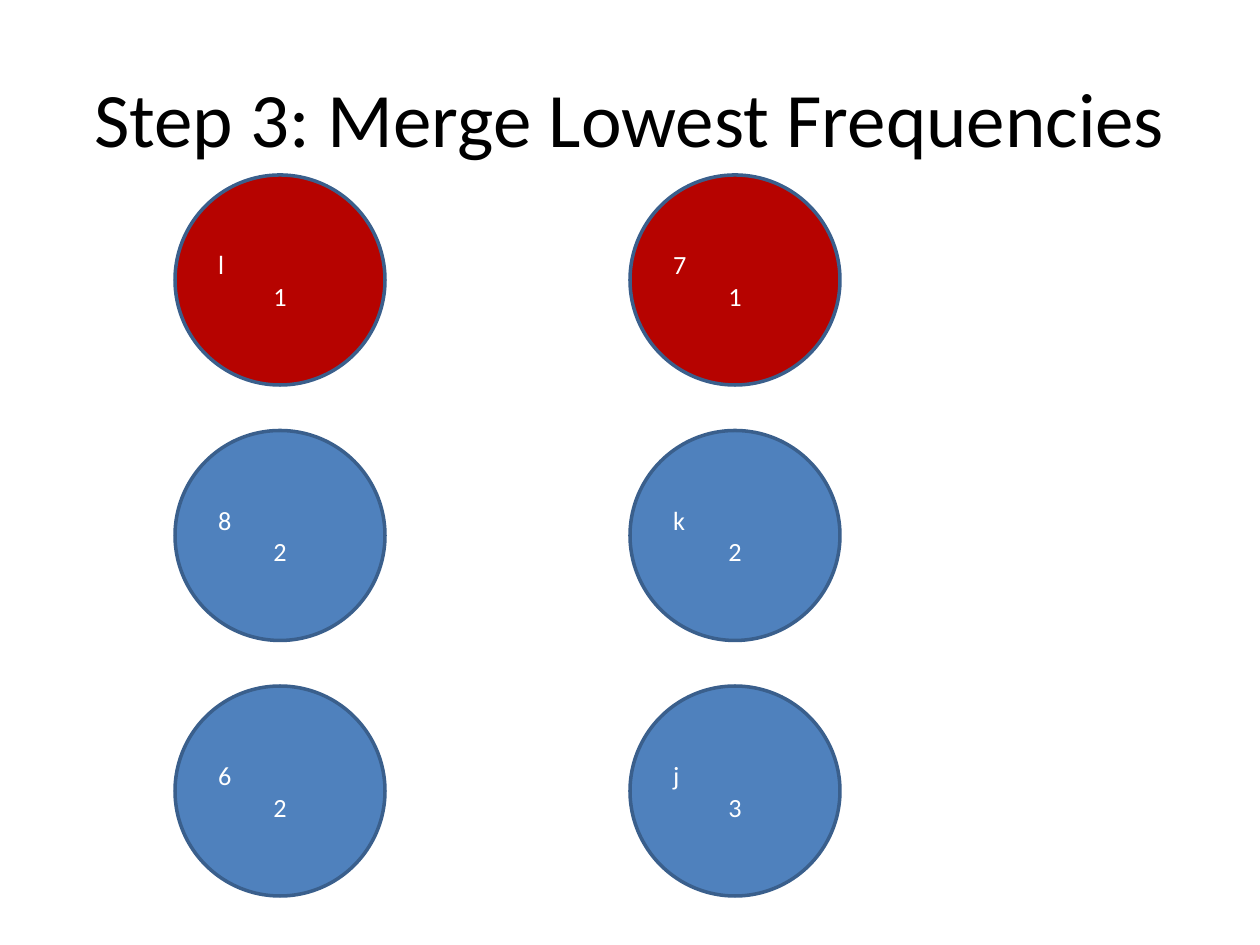
import pptx
import pptx.dml.color
import pptx.enum.shapes
import pptx.enum.text
import pptx.util

Pt = pptx.util.Pt
ALIGN = pptx.enum.text.PP_ALIGN

RED, BLUE, OUTLINE = "B60300", "4F81BD", "3A5F8C"
WHITE, BLACK = "FFFFFF", "000000"

# Symbol, frequency and fill of each node, row by row
NODES = [
    [("l", "1", RED), ("7", "1", RED)],
    [("8", "2", BLUE), ("k", "2", BLUE)],
    [("6", "2", BLUE), ("j", "3", BLUE)],
]
DIAMETER = 120
COLUMN_PITCH, ROW_PITCH = 260, 146


def color(hex_value):
    return pptx.dml.color.RGBColor.from_string(hex_value)


def write_paragraph(paragraph, text, size, hex_value, alignment):
    paragraph.alignment = alignment
    run = paragraph.add_run()
    run.text = text
    run.font.color.rgb = color(hex_value)
    for name, value in {"name": "Calibri", "size": Pt(size)}.items():
        setattr(run.font, name, value)


def middle_frame(shape):
    frame = shape.text_frame
    settings = {
        "word_wrap": True,
        "vertical_anchor": pptx.enum.text.MSO_ANCHOR.MIDDLE,
    }
    for name, value in settings.items():
        setattr(frame, name, value)
    return frame


def add_title(slide, left, top, width, height):
    box = slide.shapes.add_textbox(Pt(left), Pt(top), Pt(width), Pt(height))
    write_paragraph(middle_frame(box).paragraphs[0],
                    "Step 3: Merge Lowest Frequencies", 44, BLACK, ALIGN.CENTER)


def add_node(slide, left, top, diameter, symbol, frequency, fill):
    shape = slide.shapes.add_shape(
        pptx.enum.shapes.MSO_SHAPE.OVAL,
        Pt(left), Pt(top), Pt(diameter), Pt(diameter))
    shape.shadow.inherit = False
    shape.fill.solid()
    shape.fill.fore_color.rgb = color(fill)
    shape.line.color.rgb = color(OUTLINE)
    shape.line.width = Pt(2)

    # Symbol at the left, frequency centred below it
    frame = middle_frame(shape)
    write_paragraph(frame.paragraphs[0], symbol, 15, WHITE, ALIGN.LEFT)
    write_paragraph(frame.add_paragraph(), frequency, 15, WHITE, ALIGN.CENTER)


def add_node_grid(slide, left, top):
    for row, nodes in enumerate(NODES):
        for column, node in enumerate(nodes):
            add_node(slide, left + column * COLUMN_PITCH,
                     top + row * ROW_PITCH, DIAMETER, *node)


def main():
    presentation = pptx.Presentation()
    presentation.slide_width = Pt(720)
    presentation.slide_height = Pt(540)
    slide = presentation.slides.add_slide(presentation.slide_layouts[6])
    add_title(slide, 36, 21.6, 648, 90)
    add_node_grid(slide, 100, 100)
    presentation.save("out.pptx")


if __name__ == "__main__":
    main()
